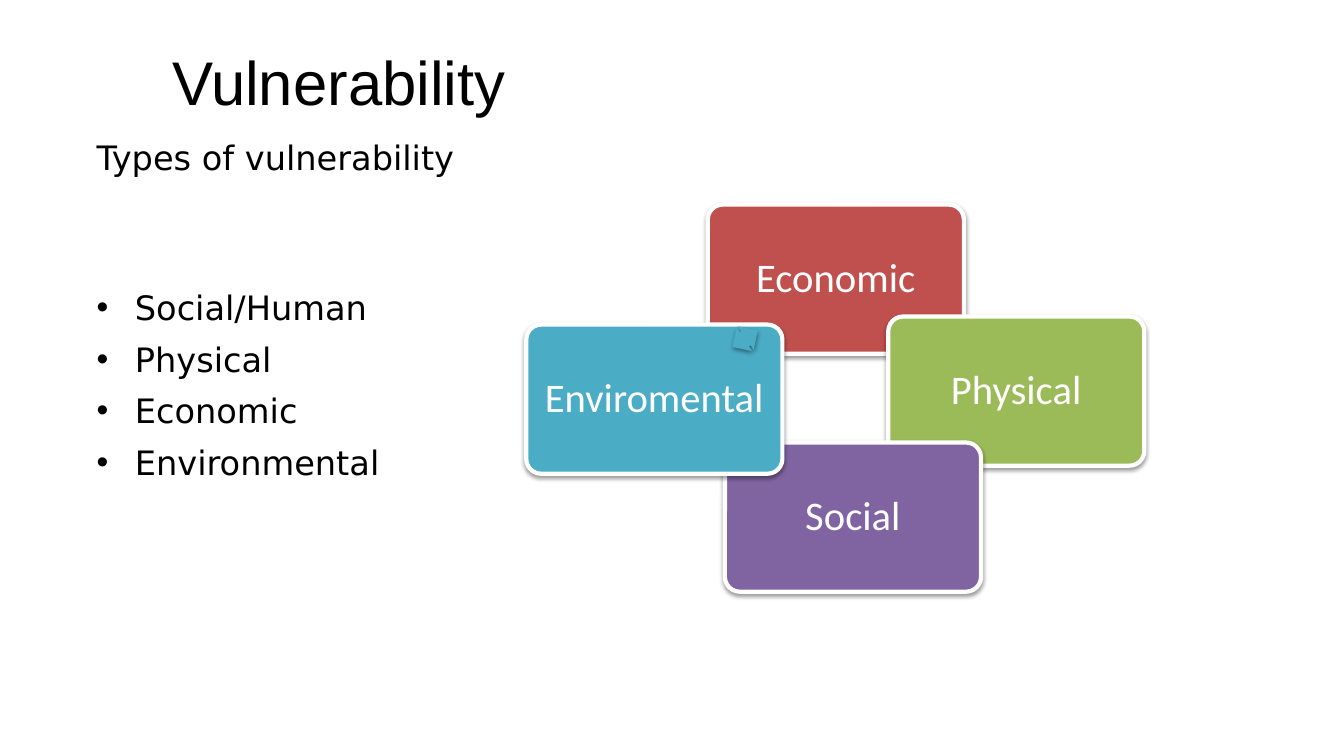
from dataclasses import dataclass
from lxml.etree import SubElement
from pptx import Presentation
from pptx.dml.color import RGBColor as RGB
from pptx.enum.shapes import MSO_SHAPE as Shape
from pptx.enum.text import MSO_ANCHOR as Anchor, PP_ALIGN as Align
from pptx.oxml.ns import qn
from pptx.util import Inches, Pt


@dataclass(frozen=True)
class Theme:
    ink: str = "000000"
    paper: str = "FFFFFF"
    red: str = "C0504D"
    green: str = "9BBB59"
    violet: str = "8064A2"
    teal: str = "4BACC6"
    head: tuple = ("Arial", 44)
    body: tuple = ("DejaVu Sans", 24)
    card: tuple = ("Calibri", 29)


THEME = Theme()
CELL = 1 / 6  # inches; the slide is a grid of 80 columns by 45 rows
CARD = (15.24, 8.88)


def grid(box):
    return [Inches(n * CELL) for n in box]


def add_run(para, text, style, color):
    run = para.add_run()
    run.text = text
    run.font.name, size = style
    run.font.size = Pt(size)
    run.font.color.rgb = RGB.from_string(color)


def add_frame(slide, box, anchor=Anchor.TOP):
    frame = slide.shapes.add_textbox(*grid(box)).text_frame
    frame.word_wrap = True
    frame.vertical_anchor = anchor
    return frame


def add_line(slide, box, text, style, anchor=Anchor.TOP):
    frame = add_frame(slide, box, anchor)
    add_run(frame.paragraphs[0], text, style, THEME.ink)


def add_list(slide, box, items):
    frame = add_frame(slide, box)
    for i, item in enumerate(items):
        para = frame.paragraphs[0] if i == 0 else frame.add_paragraph()
        props = para._p.get_or_add_pPr()
        indent = Inches(0.38)
        props.set("marL", str(indent))
        props.set("indent", str(-indent))
        SubElement(props, qn("a:buFont"), typeface="Arial")
        SubElement(props, qn("a:buChar"), char="•")
        para.line_spacing = 1.07
        para.space_before = Pt(6 if i else 0)
        add_run(para, item, THEME.body, THEME.ink)


def add_block(slide, kind, box, color):
    shape = slide.shapes.add_shape(kind, *grid(box))
    shape.fill.solid()
    shape.fill.fore_color.rgb = RGB.from_string(color)
    shape.line.fill.background()
    # Soft shadow straight below
    shape.shadow.inherit = False
    effects = shape._element.spPr.find(qn("a:effectLst"))
    shade = SubElement(effects, qn("a:outerShdw"), blurRad=str(Pt(3.1)),
                       dist=str(Pt(1.6)), dir="5400000", rotWithShape="0")
    tint = SubElement(shade, qn("a:srgbClr"), val=THEME.ink)
    SubElement(tint, qn("a:alpha"), val="38000")
    return shape


def add_card(slide, left, top, label, color):
    card = add_block(slide, Shape.ROUNDED_RECTANGLE, (left, top, *CARD), color)
    card.adjustments[0] = 0.1
    card.line.color.rgb = RGB.from_string(THEME.paper)
    card.line.width = Pt(3)
    frame = card.text_frame
    frame.word_wrap = True
    frame.vertical_anchor = Anchor.MIDDLE
    frame.margin_left = frame.margin_right = Inches(0.12)
    frame.margin_top = frame.margin_bottom = Inches(0.12)
    para = frame.paragraphs[0]
    para.alignment = Align.CENTER
    para.line_spacing = 0.9
    add_run(para, label, THEME.card, THEME.paper)


def add_cycle(slide, left, top):
    cards = [
        (10.8, 0, "Economic", THEME.red),
        (21.54, 6.66, "Physical", THEME.green),
        (11.82, 14.16, "Social", THEME.violet),
        (0, 7.14, "Enviromental", THEME.teal),
    ]
    for x, y, label, color in cards:
        add_card(slide, left + x, top + y, label, color)
    # Arrow back to the first card
    box = (left + 12.12, top + 7.14, 1.8, 1.68)
    arrow = add_block(slide, Shape.LEFT_RIGHT_ARROW, box, THEME.teal)
    arrow.adjustments[0] = 0.6
    arrow.adjustments[1] = 0.5
    arrow.rotation = 146.6


def main():
    deck = Presentation()
    deck.slide_width, deck.slide_height = Inches(13.33), Inches(7.5)
    slide = deck.slides.add_slide(deck.slide_layouts[6])
    # Headings
    add_line(slide, (9.66, 1.86, 55.5, 5.94), "Vulnerability",
             THEME.head, Anchor.MIDDLE)
    add_line(slide, (5.16, 7.86, 60, 3.96), "Types of vulnerability", THEME.body)
    # Types as a list and as a cycle
    add_list(slide, (5.16, 16.62, 68, 12.24),
             ["Social/Human", "Physical", "Economic", "Environmental"])
    add_cycle(slide, 31.32, 12.18)
    deck.save("out.pptx")


if __name__ == "__main__":
    main()
